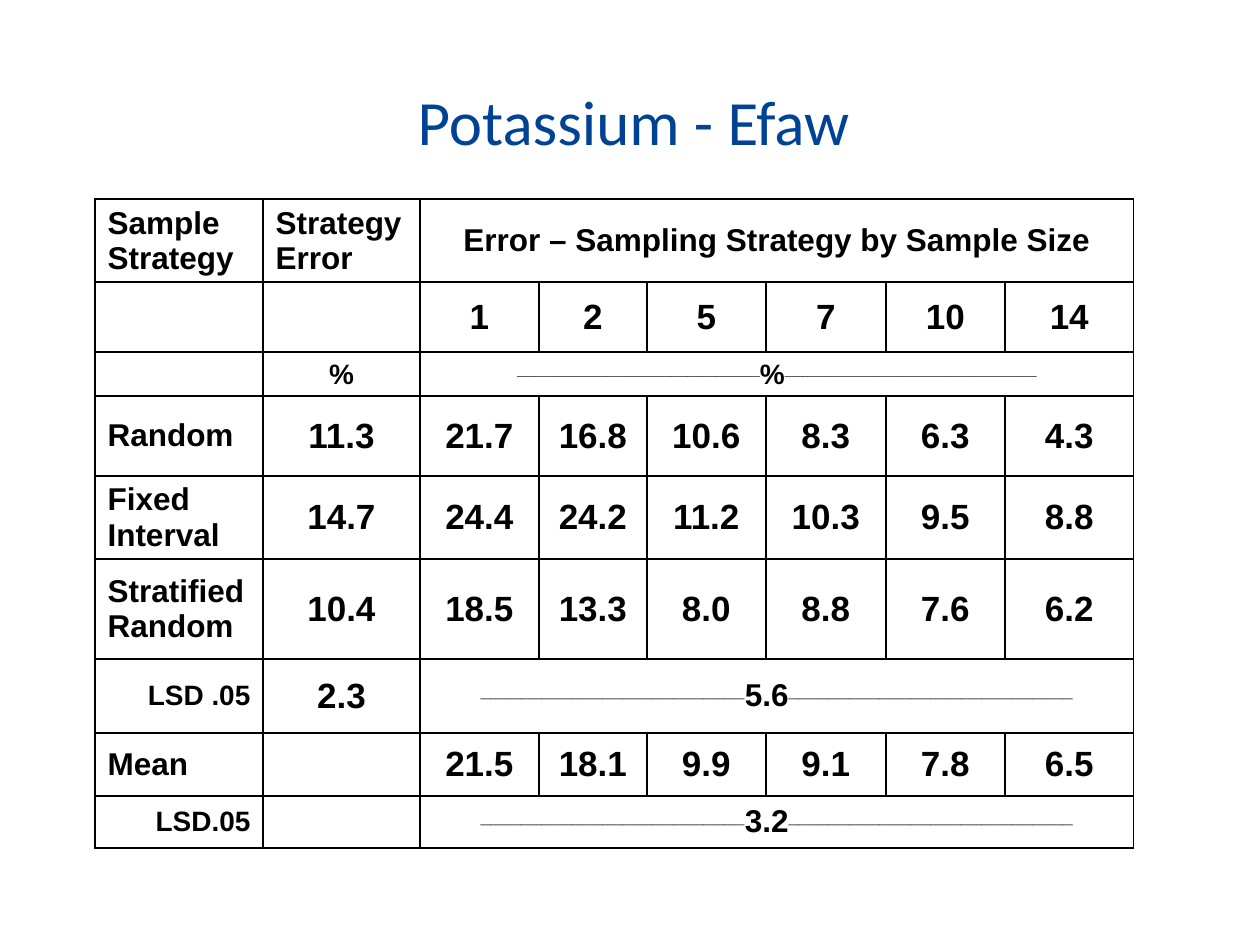
from lxml import etree
from pptx import Presentation, util as u
from pptx.dml.color import RGBColor
from pptx.enum import text
from pptx.oxml.ns import qn

PX = 914400 // 126
BLUE = RGBColor(0x00, 0x43, 0x95)
BLACK = RGBColor(0x00, 0x00, 0x00)
LEFT, CENTER, RIGHT = text.PP_ALIGN.LEFT, text.PP_ALIGN.CENTER, text.PP_ALIGN.RIGHT
TOP, MIDDLE = text.MSO_ANCHOR.TOP, text.MSO_ANCHOR.MIDDLE

# Content: a short row has its last cell spanning the sample sizes;
# a tuple is (left rule length, value, right rule length)
TITLE = "Potassium - Efaw"
ROWS = [
    ["Sample Strategy", "Strategy Error", "Error – Sampling Strategy by Sample Size"],
    ["", "", "1", "2", "5", "7", "10", "14"],
    ["", "%", (27, "%", 28)],
    ["Random", "11.3", "21.7", "16.8", "10.6", "8.3", "6.3", "4.3"],
    ["Fixed Interval", "14.7", "24.4", "24.2", "11.2", "10.3", "9.5", "8.8"],
    ["Stratified Random", "10.4", "18.5", "13.3", "8.0", "8.8", "7.6", "6.2"],
    ["LSD .05", "2.3", (26, "5.6", 28)],
    ["Mean", "", "21.5", "18.1", "9.9", "9.1", "7.8", "6.5"],
    ["LSD.05", "", (26, "3.2", 28)],
]
COL_W = [168, 157, 119, 108, 119, 120, 119, 129]
ROW_H = [83, 70, 44, 80, 83, 100, 74, 63, 52]
HEADER_ROW, UNIT_ROW = 0, 2
MARGINS = {TOP: (7, 0), MIDDLE: (3, 3)}  # top and bottom


def px(n):
    return u.Emu(n * PX)


def cell_format(row, col, value):
    """Return size, alignment and anchor for one cell."""
    if row == UNIT_ROW:
        return 16, CENTER, TOP
    if row == HEADER_ROW:
        return (18, CENTER, MIDDLE) if col == 2 else (18, LEFT, TOP)
    if col == 0:
        return (16, RIGHT, MIDDLE) if value.startswith("LSD") else (18, LEFT, MIDDLE)
    return (18 if isinstance(value, tuple) else 20), CENTER, MIDDLE


def set_borders(cell):
    tcPr = cell._tc.get_or_add_tcPr()
    for i, side in enumerate(("a:lnL", "a:lnR", "a:lnT", "a:lnB")):
        ln = etree.Element(qn(side), w="12700")
        fill = etree.SubElement(ln, qn("a:solidFill"))
        etree.SubElement(fill, qn("a:srgbClr"), val=str(BLACK))
        tcPr.insert(i, ln)


def fill_cell(cell, row, col, value):
    size, align, anchor = cell_format(row, col, value)
    cell.vertical_anchor = anchor
    cell.margin_top, cell.margin_bottom = map(px, MARGINS[anchor])
    p = cell.text_frame.paragraphs[0]
    p.alignment = align
    if not value:
        etree.SubElement(p._p, qn("a:endParaRPr"), sz="1600")
        return
    if isinstance(value, tuple):
        before, label, after = value
        parts = ["_" * before, label, "_" * after]
    else:
        parts = [value]
    for part in parts:
        r = p.add_run()
        r.text = part
        r.font.name, r.font.size, r.font.bold = "Arial", u.Pt(size), True
        r.font.color.rgb = BLACK
        if part.startswith("_"):
            r._r.get_or_add_rPr().set("baseline", "30000")


prs = Presentation()
prs.slide_width, prs.slide_height = px(1260), px(945)
s = prs.slides.add_slide(prs.slide_layouts[6])

# Title
sp = s.shapes.add_textbox(px(98), px(52), px(1071), px(136))
tf = sp.text_frame
tf.word_wrap = True
tf.vertical_anchor = MIDDLE
p = tf.paragraphs[0]
p.text = TITLE
p.alignment = CENTER
font = p.runs[0].font
font.name, font.size = "Calibri", u.Pt(36)
font.color.rgb = BLUE

# Table
tbl = s.shapes.add_table(len(ROWS), len(COL_W), px(95), px(199),
                         px(sum(COL_W)), px(sum(ROW_H))).table
tbl.first_row = tbl.horz_banding = False
for column, w in zip(tbl.columns, COL_W):
    column.width = px(w)
for row, h in zip(tbl.rows, ROW_H):
    row.height = px(h)
for i, values in enumerate(ROWS):
    for j in range(len(COL_W)):
        cell = tbl.cell(i, j)
        cell.fill.background()
        set_borders(cell)
    if len(values) < len(COL_W):
        tbl.cell(i, 2).merge(tbl.cell(i, len(COL_W) - 1))
    for j, value in enumerate(values):
        fill_cell(tbl.cell(i, j), i, j, value)

prs.save("out.pptx")
